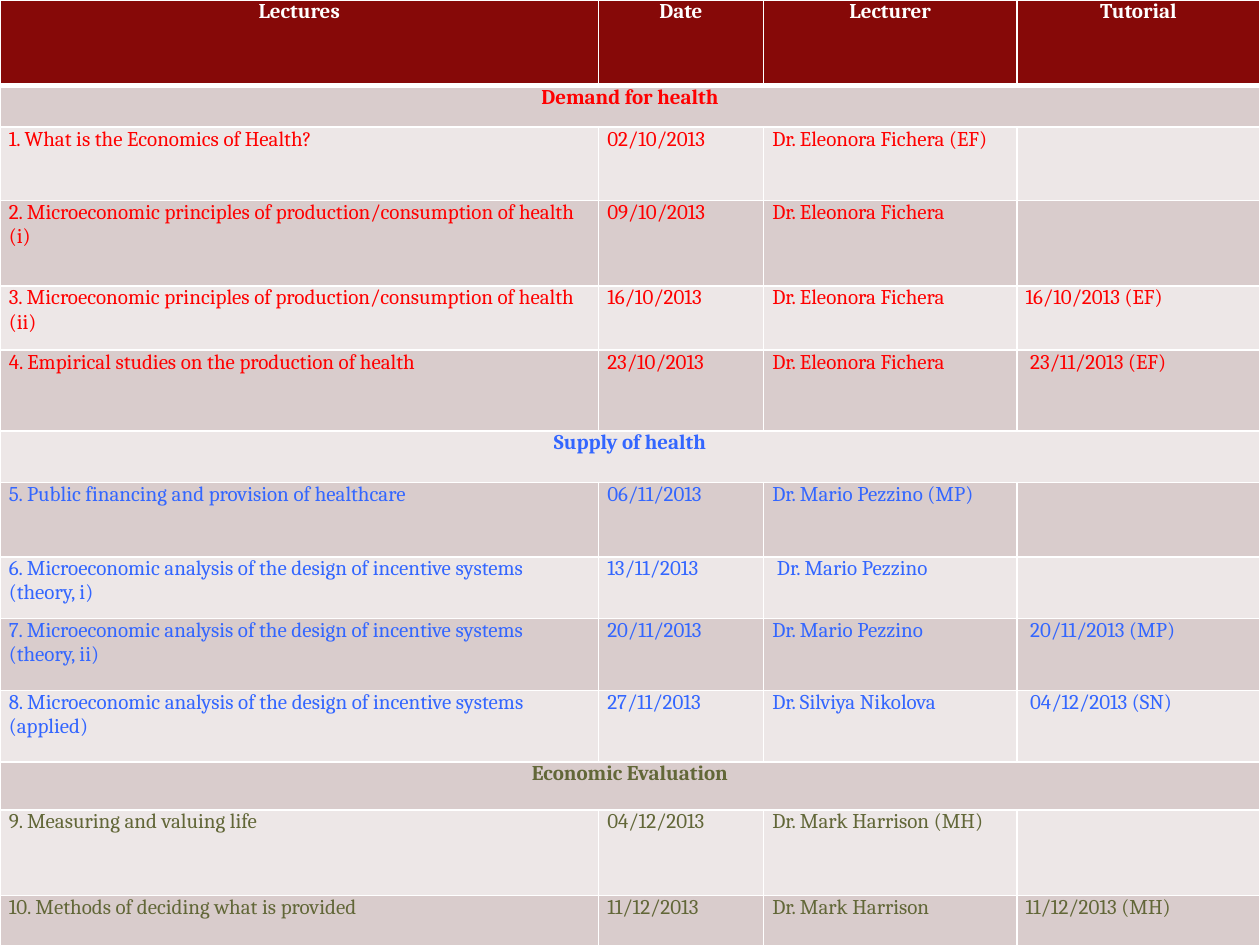
import dataclasses

import lxml.etree
import pptx
import pptx.dml.color
import pptx.enum.text
import pptx.oxml.ns
import pptx.util


@dataclasses.dataclass(frozen=True)
class Theme:
    font: str = "Cambria"
    size: int = 12
    white: str = "FFFFFF"
    header: str = "860908"
    bands: tuple = ("EDE7E7", "D9CCCC")
    thin: float = 1
    thick: float = 3
    side_margin: float = 0.07


THEME = Theme()
COLUMN_WIDTHS = (4.75, 1.31, 2.01, 1.93)
HEADER_HEIGHT = 0.68
HEADINGS = ("Lectures", "Date", "Lecturer", "Tutorial")

# Each section: title, text colour, height of the title row, lectures.
# Each lecture: row height, then the four cell texts.
SECTIONS = (
    ("Demand for health", "FF0000", 0.33, (
        (0.58, "1. What is the Economics of Health?", "02/10/2013", "Dr. Eleonora Fichera (EF)", ""),
        (0.68, "2. Microeconomic principles of production/consumption of health (i)",
         "09/10/2013", "Dr. Eleonora Fichera", ""),
        (0.51, "3. Microeconomic principles of production/consumption of health (ii)",
         "16/10/2013", "Dr. Eleonora Fichera", "16/10/2013 (EF)"),
        (0.64, "4. Empirical studies on the production of health",
         "23/10/2013", "Dr. Eleonora Fichera", " 23/11/2013 (EF)"),
    )),
    ("Supply of health", "3366FF", 0.41, (
        (0.59, "5. Public financing and provision of healthcare",
         "06/11/2013", "Dr. Mario Pezzino (MP)", ""),
        (0.49, "6. Microeconomic analysis of the design of incentive systems\n(theory, i)",
         "13/11/2013", " Dr. Mario Pezzino", ""),
        (0.57, "7. Microeconomic analysis of the design of incentive systems\n(theory, ii)",
         "20/11/2013", "Dr. Mario Pezzino", " 20/11/2013 (MP)"),
        (0.57, "8. Microeconomic analysis of the design of incentive systems\n(applied)",
         "27/11/2013", "Dr. Silviya Nikolova", " 04/12/2013 (SN)"),
    )),
    ("Economic Evaluation", "626738", 0.38, (
        (0.68, "9. Measuring and valuing life", "04/12/2013", "Dr. Mark Harrison (MH)", ""),
        (0.68, "10. Methods of deciding what is provided",
         "11/12/2013", "Dr. Mark Harrison", "11/12/2013 (MH)"),
    )),
)


def set_borders(cell, top, bottom):
    """Draw white borders; top and bottom are line widths in points."""
    properties = cell._tc.get_or_add_tcPr()
    qualified = pptx.oxml.ns.qn
    widths = {"a:lnL": THEME.thin, "a:lnR": THEME.thin, "a:lnT": top, "a:lnB": bottom}
    for tag, width in widths.items():
        line = lxml.etree.SubElement(properties, qualified(tag), w=str(pptx.util.Pt(width)))
        fill = lxml.etree.SubElement(line, qualified("a:solidFill"))
        lxml.etree.SubElement(fill, qualified("a:srgbClr"), val=THEME.white)


def fill_cell(cell, text, fill, color, bold):
    """Write the text; bold cells are headings and are centred."""
    cell.margin_left = cell.margin_right = pptx.util.Inches(THEME.side_margin)
    cell.margin_top = cell.margin_bottom = 0
    cell.fill.solid()
    cell.fill.fore_color.rgb = pptx.dml.color.RGBColor.from_string(fill)
    cell.text_frame.text = text
    alignment = pptx.enum.text.PP_ALIGN
    for paragraph in cell.text_frame.paragraphs:
        paragraph.alignment = alignment.CENTER if bold else alignment.LEFT
        for run in paragraph.runs:
            run.font.name = THEME.font
            run.font.size = pptx.util.Pt(THEME.size)
            run.font.bold = bold
            run.font.color.rgb = pptx.dml.color.RGBColor.from_string(color)


def timetable_rows():
    """List every row as height, texts, text colour and boldness."""
    rows = [(HEADER_HEIGHT, HEADINGS, THEME.white, True)]
    for title, color, title_height, lectures in SECTIONS:
        rows.append((title_height, (title, "", "", ""), color, True))
        rows += [(height, texts, color, False) for height, *texts in lectures]
    return rows


def add_timetable(slide, width):
    rows = timetable_rows()
    total_height = pptx.util.Inches(sum(row[0] for row in rows))
    table = slide.shapes.add_table(
        len(rows), len(COLUMN_WIDTHS), 0, 0, width, total_height).table
    table.horz_banding = False
    for column, column_width in zip(table.columns, COLUMN_WIDTHS):
        column.width = pptx.util.Inches(column_width)

    for index, (height, texts, color, bold) in enumerate(rows):
        table.rows[index].height = pptx.util.Inches(height)
        fill = THEME.bands[index % 2] if index else THEME.header
        top = THEME.thick if index == 1 else THEME.thin
        bottom = THEME.thick if index == 0 else THEME.thin
        for column_index, text in enumerate(texts):
            cell = table.cell(index, column_index)
            set_borders(cell, top, bottom)
            fill_cell(cell, text, fill, color, bold)
        if bold and index:
            table.cell(index, 0).merge(table.cell(index, len(COLUMN_WIDTHS) - 1))


def main():
    presentation = pptx.Presentation()
    presentation.slide_width = pptx.util.Inches(10)
    presentation.slide_height = pptx.util.Inches(7.5)
    slide = presentation.slides.add_slide(presentation.slide_layouts[6])
    add_timetable(slide, presentation.slide_width)
    presentation.save("out.pptx")


if __name__ == "__main__":
    main()
